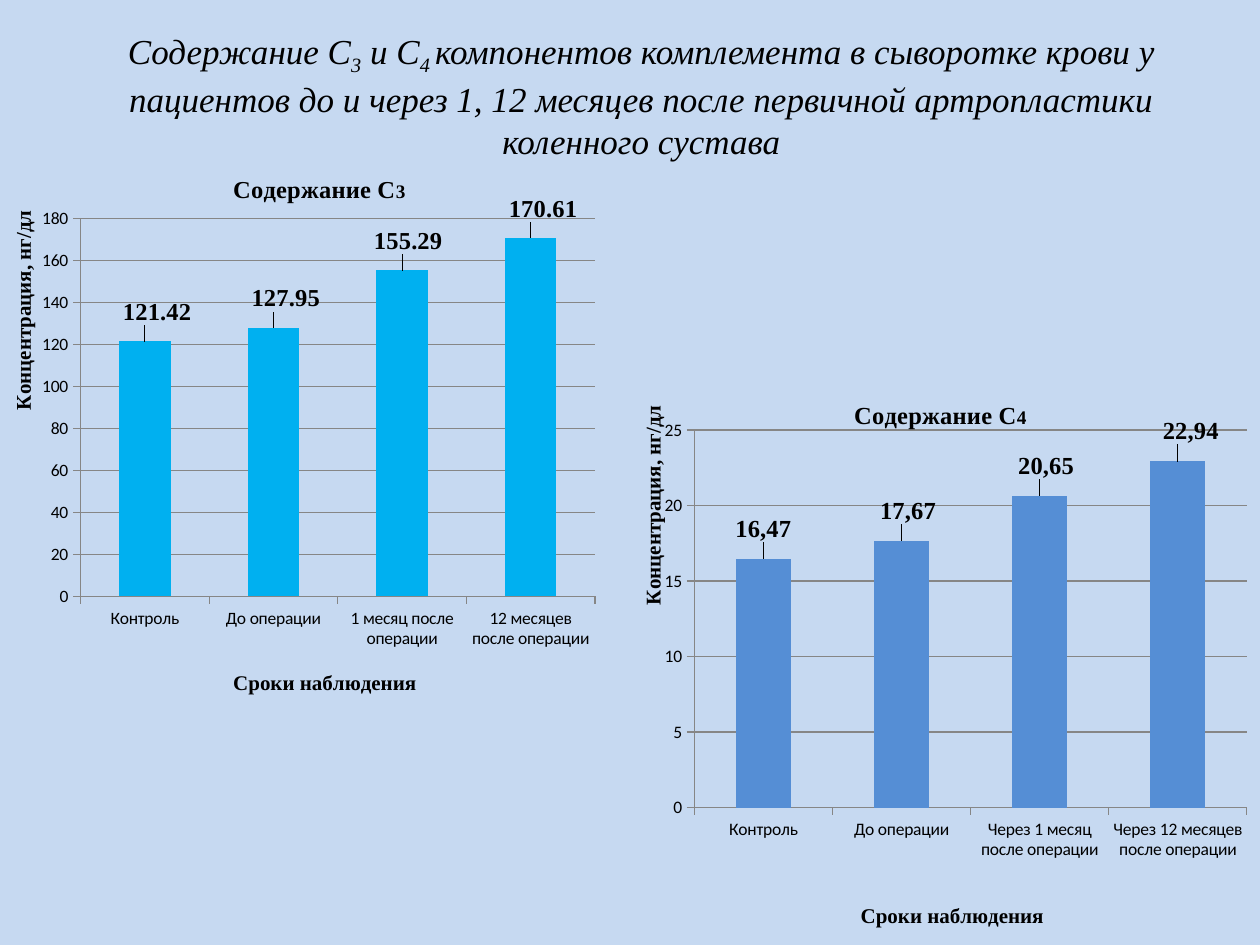
from dataclasses import dataclass

from lxml import etree
from pptx import Presentation
from pptx.chart.data import CategoryChartData
from pptx.dml.color import RGBColor
from pptx.enum.chart import XL_CHART_TYPE, XL_LABEL_POSITION, XL_TICK_MARK
from pptx.enum.text import MSO_ANCHOR, PP_ALIGN
from pptx.oxml.ns import qn
from pptx.util import Inches, Pt

COLUMNS = XL_CHART_TYPE.COLUMN_CLUSTERED
ABOVE_BAR = XL_LABEL_POSITION.OUTSIDE_END
TICK_OUTSIDE = XL_TICK_MARK.OUTSIDE
MIDDLE = MSO_ANCHOR.MIDDLE
CENTER = PP_ALIGN.CENTER
TITLE_ONLY = 5


@dataclass(frozen=True)
class Theme:
    background: str = "C6D9F1"
    text: str = "000000"
    lines: str = "868686"
    c3_bars: str = "00B0F0"
    c4_bars: str = "558ED5"
    serif: str = "Times New Roman"
    sans: str = "Calibri"
    title_size: float = 20
    chart_title_size: float = 14
    index_size: float = 11
    axis_title_size: float = 12
    tick_size: float = 10


def place(parent, index, x, y, width=None, height=None):
    """Give a chart part a manual layout, in fractions of the chart."""
    for old in parent.findall(qn("c:layout")):
        parent.remove(old)
    layout = etree.Element(qn("c:layout"))
    manual = etree.SubElement(layout, qn("c:manualLayout"))
    values = {"x": x, "y": y}
    if width is not None:
        values = {"layoutTarget": "inner", "xMode": "edge", "yMode": "edge",
                  **values, "w": width, "h": height}
    elif parent.tag == qn("c:title"):
        values = {"xMode": "edge", "yMode": "edge", **values}
    for name, value in values.items():
        etree.SubElement(manual, qn(f"c:{name}")).set("val", str(value))
    parent.insert(index, layout)


class SlideBuilder:
    def __init__(self, presentation, theme):
        self.theme = theme
        self.slide = presentation.slides.add_slide(
            presentation.slide_layouts[TITLE_ONLY])
        fill = self.slide.background.fill
        fill.solid()
        fill.fore_color.rgb = RGBColor.from_string(theme.background)

    def style(self, font, size, **changes):
        values = {"name": self.theme.serif, "size": Pt(size),
                  "bold": True, "italic": False, **changes}
        for name, value in values.items():
            setattr(font, name, value)
        font.color.rgb = RGBColor.from_string(self.theme.text)

    def add_runs(self, text_frame, *runs):
        paragraph = text_frame.paragraphs[0]
        for text, size in runs:
            run = paragraph.add_run()
            run.text = text
            self.style(run.font, size)

    def title(self, left, top, width, height, runs):
        shape = self.slide.shapes.title
        shape.left, shape.top = Inches(left), Inches(top)
        shape.width, shape.height = Inches(width), Inches(height)
        frame = shape.text_frame
        frame.word_wrap = True
        frame.vertical_anchor = MIDDLE
        paragraph = frame.paragraphs[0]
        paragraph.alignment = CENTER
        for text, is_index in runs:
            run = paragraph.add_run()
            run.text = text
            self.style(run.font, self.theme.title_size, bold=False, italic=True)
            if is_index:
                run.font._element.set("baseline", "-25000")

    def axis(self, axis, text, position):
        axis.major_tick_mark = TICK_OUTSIDE
        axis.format.line.color.rgb = RGBColor.from_string(self.theme.lines)
        self.add_runs(axis.axis_title.text_frame, (text, self.theme.axis_title_size))
        place(axis.axis_title._element, 1, *position)

    def column_chart(self, box, heading, index, data, color, maximum, step,
                     plot_box, title_at, category_title_at, value_title_at,
                     label_offsets, decimal_mark):
        theme = self.theme
        chart_data = CategoryChartData()
        chart_data.categories = list(data)
        chart_data.add_series("Series 1", list(data.values()))
        chart = self.slide.shapes.add_chart(
            COLUMNS, *map(Inches, box), chart_data).chart
        chart.has_legend = False
        self.style(chart.font, theme.tick_size, name=theme.sans, bold=False)

        # Heading and plot area
        self.add_runs(chart.chart_title.text_frame,
                      (heading, theme.chart_title_size), (index, theme.index_size))
        place(chart.chart_title._element, 1, *title_at)
        place(chart._chartSpace.chart.plotArea, 0, *plot_box)

        # Axes
        self.axis(chart.category_axis, "Сроки наблюдения", category_title_at)
        value_axis = chart.value_axis
        self.axis(value_axis, "Концентрация, нг/дл", value_title_at)
        body = value_axis.axis_title.text_frame._txBody.bodyPr
        body.set("rot", "-5400000")
        body.set("vert", "horz")
        value_axis.minimum_scale = 0
        value_axis.maximum_scale = maximum
        value_axis.major_unit = step
        grid_line = value_axis.major_gridlines.format.line
        grid_line.color.rgb = RGBColor.from_string(theme.lines)

        # Bars and their labels
        plot = chart.plots[0]
        plot.gap_width = 150
        plot.vary_by_categories = False
        series = plot.series[0]
        series.format.fill.solid()
        series.format.fill.fore_color.rgb = RGBColor.from_string(color)
        labels = series.data_labels
        labels.show_value = True
        labels.position = ABOVE_BAR
        self.style(labels.font, theme.chart_title_size)
        for number, value in enumerate(data.values()):
            label = series.points[number].data_label
            if decimal_mark == ".":
                self.style(label.font, theme.chart_title_size)
            else:
                text = f"{value:.2f}".replace(".", decimal_mark)
                self.add_runs(label.text_frame, (text, theme.chart_title_size))
            label.position = ABOVE_BAR
        for element, offset in zip(series._element.xpath(".//c:dLbl"), label_offsets):
            place(element, 1, *offset)


def main():
    presentation = Presentation()
    presentation.slide_width, presentation.slide_height = Inches(10), Inches(7.5)
    theme = Theme()
    builder = SlideBuilder(presentation, theme)

    builder.title(0.59, 0.21, 9, 1.09, [
        ("Содержание С", False), ("3", True), (" и С", False), ("4 ", True),
        ("компонентов комплемента в сыворотке крови у пациентов до и через "
         "1, 12 месяцев после первичной артропластики коленного сустава", False)])

    # C4 component, lower right
    builder.column_chart(
        (4.84, 2.96, 5.16, 4.54), "Содержание С", "4",
        {"Контроль": 16.47, "До операции": 17.67,
         "Через 1 месяц после операции": 20.65,
         "Через 12 месяцев после операции": 22.94},
        theme.c4_bars, 25, 5, plot_box=(0.13, 0.1, 0.85, 0.66),
        title_at=(0.37, 0.04), category_title_at=(0.38, 0.92),
        value_title_at=(0.04, 0.05),
        label_offsets=[(0, -0.02), (0.01, -0.02), (0.01, -0.02), (0.02, -0.02)],
        decimal_mark=",")

    # C3 component, upper left
    builder.column_chart(
        (0, 1.31, 4.92, 4.25), "Cодержание С", "3",
        {"Контроль": 121.42, "До операции": 127.95,
         "1 месяц после операции": 155.29,
         "12 месяцев после операции": 170.61},
        theme.c3_bars, 180, 20, plot_box=(0.13, 0.1, 0.83, 0.71),
        title_at=(0.37, 0.01), category_title_at=(0.37, 0.94),
        value_title_at=(0.01, 0.08),
        label_offsets=[(0.02, -0.02), (0.02, -0.02), (0.01, -0.02), (0.02, -0.02)],
        decimal_mark=".")

    presentation.save("out.pptx")


if __name__ == "__main__":
    main()
